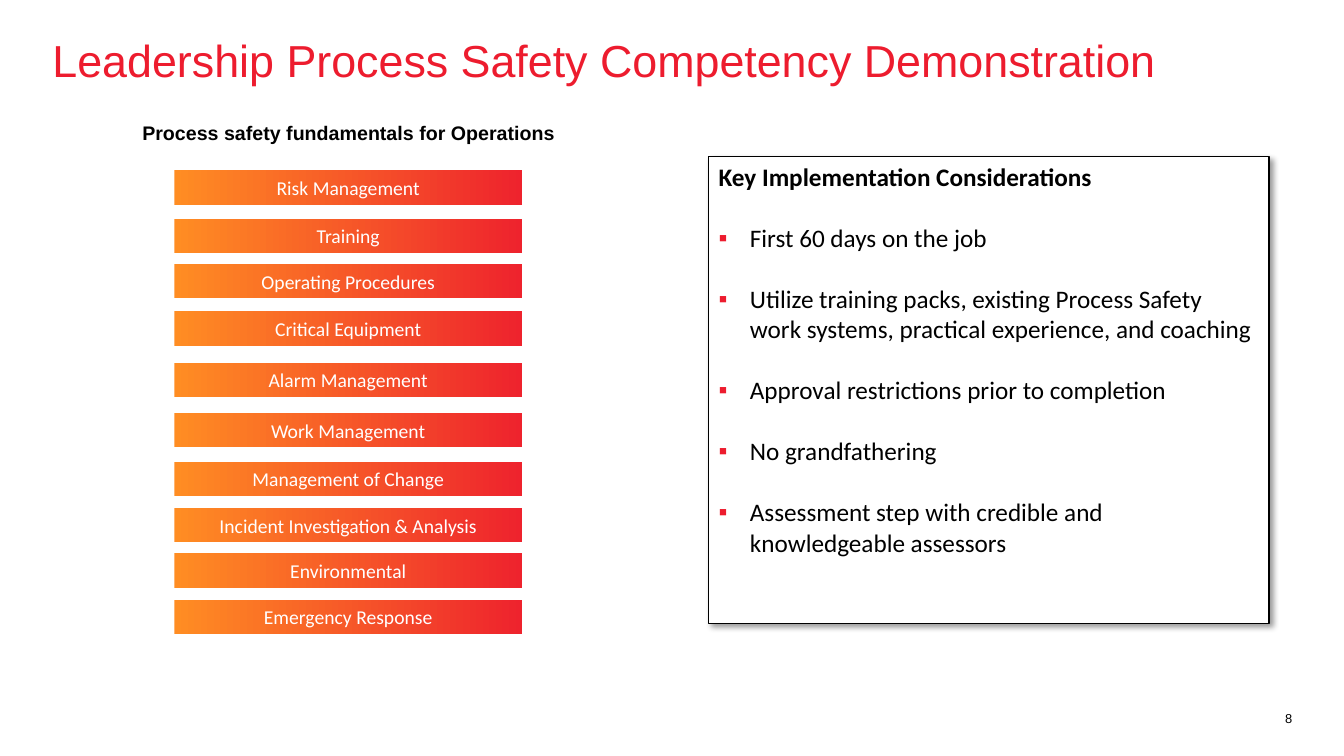
from dataclasses import dataclass
from typing import Any

import lxml.etree
import pptx
import pptx.dml.color
import pptx.enum.shapes
import pptx.enum.text
import pptx.oxml.ns
import pptx.util

ALIGN = pptx.enum.text.PP_ALIGN
ANCHOR = pptx.enum.text.MSO_ANCHOR
qn = pptx.oxml.ns.qn


@dataclass(frozen=True)
class Theme:
    red: str = "ED1C2E"
    bar_start: str = "FF8D23"
    bar_end: str = "EE232D"
    black: str = "000000"
    white: str = "FFFFFF"
    heading_font: str = "Arial"
    body_font: str = "Calibri"
    title_size: float = 32
    body_size: float = 18
    label_size: float = 14
    number_size: float = 9.2


@dataclass(frozen=True)
class Area:
    """A box in grid columns and rows."""
    col: float
    row: float
    cols: float
    rows: float


@dataclass(frozen=True)
class Bar:
    label: str
    row: float


THEME = Theme()

# Grid of square cells, 40 across the slide
COLS, ROWS = 40, 22.5
CELL = pptx.util.Inches(1) / 3

TITLE = Area(1.56, 0.96, 36.87, 2.49)
HEADING = Area(3.39, 3.45, 13.98, 1.02)
CONSIDERATIONS = Area(21.09, 4.65, 16.68, 13.92)
NUMBER = Area(37.17, 21.15, 1.29, 0.57)
BAR_COL, BAR_COLS, BAR_ROWS = 5.19, 10.35, 1.02

BARS = [
    Bar("Risk Management", 5.07),
    Bar("Training", 6.51),
    Bar("Operating Procedures", 7.86),
    Bar("Critical Equipment", 9.27),
    Bar("Alarm Management", 10.8),
    Bar("Work Management", 12.3),
    Bar("Management of Change", 13.74),
    Bar("Incident Investigation & Analysis", 15.12),
    Bar("Environmental", 16.47),
    Bar("Emergency Response", 17.85),
]

POINTS = [
    "First 60 days on the job",
    "Utilize training packs, existing Process Safety work systems, "
    "practical experience, and coaching",
    "Approval restrictions prior to completion",
    "No grandfathering",
    "Assessment step with credible and knowledgeable assessors",
]


def rgb(value: str) -> pptx.dml.color.RGBColor:
    return pptx.dml.color.RGBColor.from_string(value)


def cells(count: float) -> pptx.util.Emu:
    return pptx.util.Emu(round(count * CELL))


def place(sp: Any, area: Area) -> None:
    sp.left, sp.top = cells(area.col), cells(area.row)
    sp.width, sp.height = cells(area.cols), cells(area.rows)


def set_frame(sp: Any, anchor: Any, inset: bool = True) -> Any:
    tf = sp.text_frame
    tf.word_wrap = True
    tf.auto_size = pptx.enum.text.MSO_AUTO_SIZE.NONE
    tf.vertical_anchor = anchor
    if not inset:
        tf.margin_left = tf.margin_right = tf.margin_top = tf.margin_bottom = 0
    return tf


def add_run(p: Any, text: str, font: str, size: float, color: str,
            bold: bool = False) -> None:
    r = p.add_run()
    r.text = text
    r.font.name = font
    r.font.size = pptx.util.Pt(size)
    r.font.bold = bold
    r.font.color.rgb = rgb(color)


def add_label(s: Any, area: Area, text: str, font: str, size: float, align: Any,
              bold: bool = False, inset: bool = True) -> None:
    sp = s.shapes.add_textbox(0, 0, 0, 0)
    place(sp, area)
    p = set_frame(sp, ANCHOR.TOP, inset).paragraphs[0]
    p.alignment = align
    add_run(p, text, font, size, THEME.black, bold)


def add_bar(s: Any, bar: Bar) -> None:
    sp = s.shapes.add_shape(pptx.enum.shapes.MSO_SHAPE.RECTANGLE, 0, 0, 0, 0)
    place(sp, Area(BAR_COL, bar.row, BAR_COLS, BAR_ROWS))
    sp.shadow.inherit = False
    sp.line.fill.background()
    sp.fill.gradient()
    sp.fill.gradient_angle = 0
    for stop, color in zip(sp.fill.gradient_stops, (THEME.bar_start, THEME.bar_end)):
        stop.color.rgb = rgb(color)
    p = set_frame(sp, ANCHOR.MIDDLE).paragraphs[0]
    p.alignment = ALIGN.CENTER
    add_run(p, bar.label, THEME.body_font, THEME.label_size, THEME.white)


def set_bullet(p: Any, char: str = "") -> None:
    pPr = p._p.get_or_add_pPr()
    indent = pptx.util.Inches(0.31) if char else 0
    pPr.set("marL", str(indent))
    pPr.set("indent", str(-indent))
    if not char:
        lxml.etree.SubElement(pPr, qn("a:buNone"))
        return
    clr = lxml.etree.SubElement(pPr, qn("a:buClr"))
    lxml.etree.SubElement(clr, qn("a:srgbClr"), val=THEME.red)
    lxml.etree.SubElement(pPr, qn("a:buFont"), typeface=THEME.heading_font)
    lxml.etree.SubElement(pPr, qn("a:buChar"), char=char)


def add_shadow(sp: Any) -> None:
    sp.shadow.inherit = False
    effects = sp._element.spPr.find(qn("a:effectLst"))
    shadow = lxml.etree.SubElement(
        effects, qn("a:outerShdw"), blurRad=str(pptx.util.Pt(4)),
        dist=str(pptx.util.Pt(3)), dir=str(45 * 60000), algn="tl", rotWithShape="0")
    clr = lxml.etree.SubElement(shadow, qn("a:srgbClr"), val=THEME.black)
    lxml.etree.SubElement(clr, qn("a:alpha"), val="40000")


def fill_considerations(sp: Any) -> None:
    place(sp, CONSIDERATIONS)
    sp.fill.solid()
    sp.fill.fore_color.rgb = rgb(THEME.white)
    sp.line.color.rgb = rgb(THEME.black)
    sp.line.width = pptx.util.Pt(0.75)
    add_shadow(sp)
    tf = set_frame(sp, ANCHOR.TOP)
    for i, text in enumerate(["Key Implementation Considerations", *POINTS]):
        p = tf.add_paragraph() if i else tf.paragraphs[0]
        set_bullet(p, "▪" if i else "")
        p.space_before = pptx.util.Pt(22 if i else 0)
        add_run(p, text, THEME.body_font, THEME.body_size, THEME.black, bold=not i)


def main() -> None:
    prs = pptx.Presentation()
    prs.slide_width, prs.slide_height = cells(COLS), cells(ROWS)
    s = prs.slides.add_slide(prs.slide_layouts[1])

    # Title
    title = s.shapes.title
    place(title, TITLE)
    p = set_frame(title, ANCHOR.TOP, inset=False).paragraphs[0]
    p.alignment = ALIGN.LEFT
    add_run(p, "Leadership Process Safety Competency Demonstration",
            THEME.heading_font, THEME.title_size, THEME.red)

    # Fundamentals
    add_label(s, HEADING, "Process safety fundamentals for Operations",
              THEME.heading_font, THEME.label_size, ALIGN.CENTER, bold=True)
    for bar in BARS:
        add_bar(s, bar)

    # Key considerations
    fill_considerations(s.placeholders[1])

    # Slide number
    add_label(s, NUMBER, "8", THEME.heading_font, THEME.number_size, ALIGN.RIGHT,
              inset=False)

    prs.save("out.pptx")


if __name__ == "__main__":
    main()
